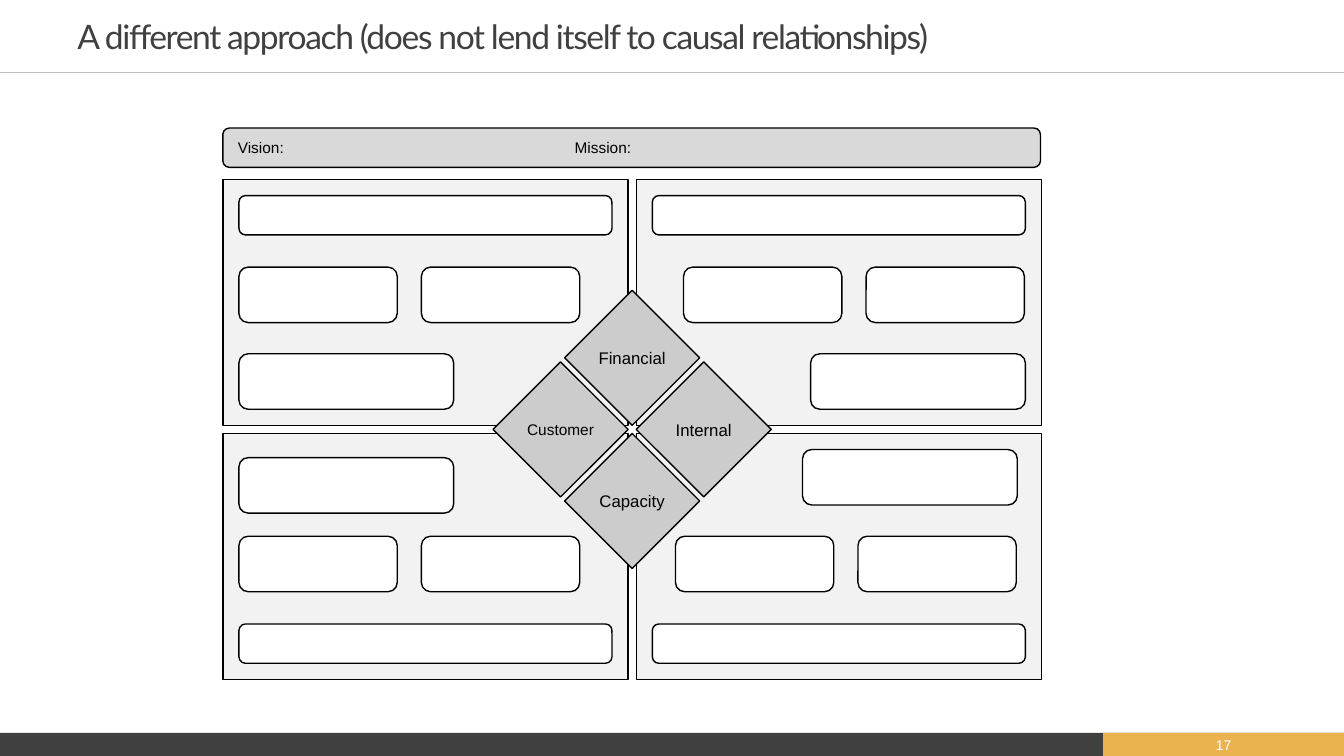
from itertools import product

from lxml import etree
from pptx import Presentation
from pptx import util as u
from pptx.dml.color import RGBColor
from pptx.enum import shapes, text
from pptx.oxml.ns import qn

HEX = {
    "white": "FFFFFF", "black": "000000", "dark": "404040", "gold": "EBB250",
    "rule": "BFBFBF", "panel": "F2F2F2", "tile": "CCCCCC", "banner": "D9D9D9",
}
KIND = shapes.MSO_SHAPE


def rgb(name):
    return RGBColor.from_string(HEX[name])


def add_box(slide, kind, area, fill, line="black"):
    box = slide.shapes.add_shape(kind, *map(u.Inches, area))
    box.shadow.inherit = False
    box.fill.solid()
    box.fill.fore_color.rgb = rgb(fill)
    if line:
        box.line.color.rgb = rgb(line)
        box.line.width = u.Pt(1)
    else:
        box.line.fill.background()
    return box


def add_rule(slide, top, width):
    rule = slide.shapes.add_connector(
        shapes.MSO_CONNECTOR.STRAIGHT, 0, u.Inches(top), u.Inches(width), u.Inches(top))
    rule.line.color.rgb = rgb("rule")
    rule.line.width = u.Pt(1)
    etree.SubElement(rule._element.spPr, qn("a:effectLst"))


def write(shape, words, size, color="black", font="Arial", align="CENTER",
          sides=0, wrap=True, tab=None, track=None):
    """Put one paragraph in a shape; tab is in inches, track in points."""
    frame = shape.text_frame
    frame.word_wrap = wrap
    frame.vertical_anchor = text.MSO_ANCHOR.MIDDLE
    frame.margin_left = frame.margin_right = u.Inches(sides)
    frame.margin_top = frame.margin_bottom = 0
    para = frame.paragraphs[0]
    para.alignment = text.PP_ALIGN[align]
    run = para.add_run()
    run.text = words
    if tab:
        tabs = etree.SubElement(para._p.get_or_add_pPr(), qn("a:tabLst"))
        etree.SubElement(tabs, qn("a:tab"), pos=str(u.Inches(tab)), algn="l")
    if track:
        run._r.get_or_add_rPr().set("spc", str(track * 100))
    para.font.name = font
    para.font.size = u.Pt(size)
    para.font.color.rgb = rgb(color)


def add_label(slide, area, words, size, **style):
    label = slide.shapes.add_textbox(*map(u.Inches, area))
    write(label, words, size, **style)


def add_frame(slide):
    add_box(slide, KIND.RECTANGLE, (0, 7.27, 13.33, 0.24), "dark", None)
    add_rule(slide, 0.72, 13.33)
    add_box(slide, KIND.RECTANGLE, (10.94, 7.27, 2.39, 0.24), "gold", None)
    add_label(slide, (10.94, 7.26, 2.39, 0.25), "17", 10, color="white")
    add_label(slide, (0.67, 0.04, 9.72, 0.63),
              "A different approach (does not lend itself to causal relationships)",
              24, color="dark", font="Lato", align="LEFT", sides=0.1, track=-1)


def add_panels(slide):
    for top, left in product((4.3, 1.78), (2.21, 6.31)):
        add_box(slide, KIND.RECTANGLE, (left, top, 4.02, 2.44), "panel")


def add_tiles(slide):
    tiles = (("Financial", 5.6, 2.88, 12), ("Capacity", 5.6, 4.3, 12),
             ("Internal", 6.31, 3.59, 12), ("Customer", 4.89, 3.59, 11))
    for name, left, top, size in tiles:
        tile = add_box(slide, KIND.DIAMOND, (left, top, 1.34, 1.34), "tile")
        write(tile, name, size, wrap=False)


def add_slots(slide):
    """Draw the empty boxes row by row: top, width, height, left edges."""
    rows = (
        (1.94, 3.7, 0.39, (2.37, 6.47)),
        (2.65, 1.57, 0.55, (2.37, 4.18, 6.78, 8.59)),
        (3.51, 2.13, 0.55, (2.37, 8.04)),
        (4.46, 2.13, 0.55, (7.96,)),
        (4.54, 2.13, 0.55, (2.37,)),
        (5.32, 1.57, 0.55, (2.37, 4.18, 6.7, 8.51)),
        (6.19, 3.7, 0.39, (2.37, 6.47)),
    )
    for top, width, height, lefts in rows:
        for left in lefts:
            add_box(slide, KIND.ROUNDED_RECTANGLE, (left, top, width, height), "white")


def add_banner(slide):
    banner = add_box(slide, KIND.ROUNDED_RECTANGLE, (2.21, 1.27, 8.11, 0.39), "banner")
    write(banner, "Vision:\tMission:", 11, align="LEFT", sides=0.13, tab=3.34)


def main():
    deck = Presentation()
    deck.slide_width = u.Inches(13.33)
    deck.slide_height = u.Inches(7.5)
    slide = deck.slides.add_slide(deck.slide_layouts[6])
    add_frame(slide)
    add_panels(slide)
    add_tiles(slide)
    add_slots(slide)
    add_banner(slide)
    deck.save("out.pptx")


if __name__ == "__main__":
    main()
